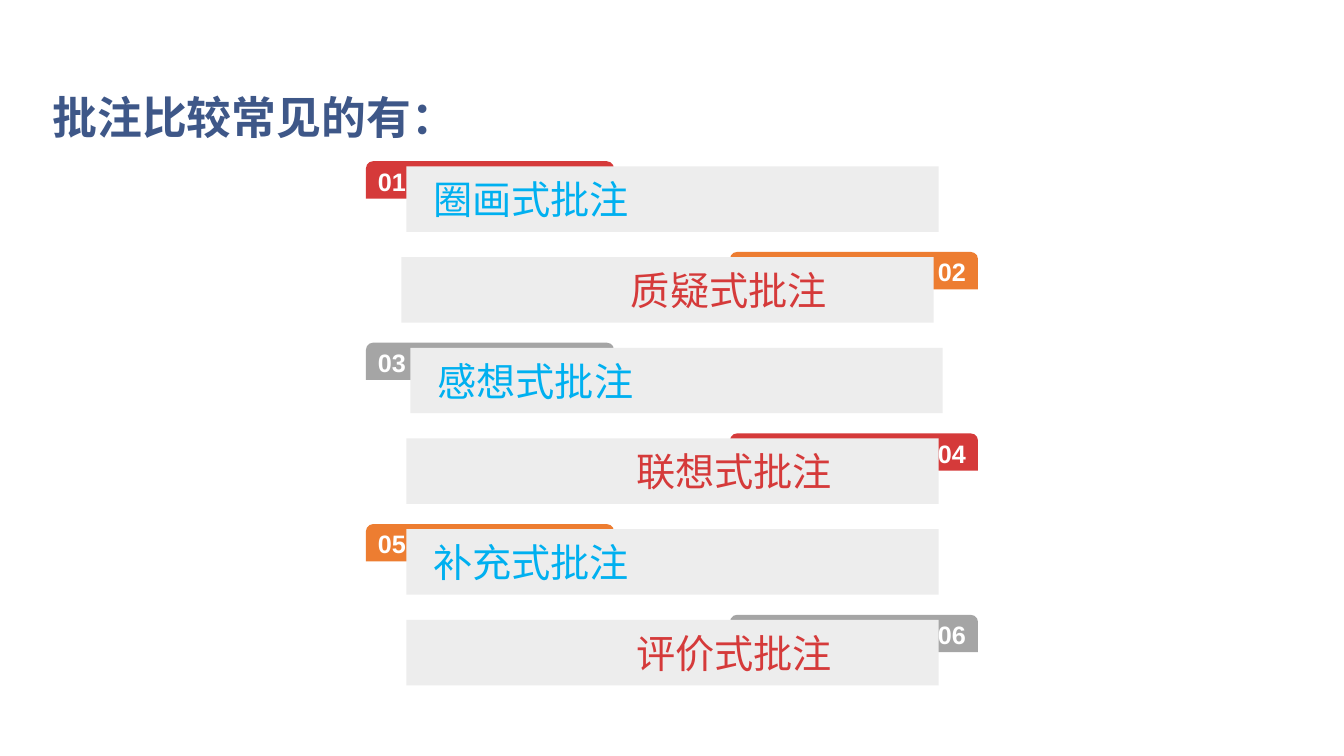
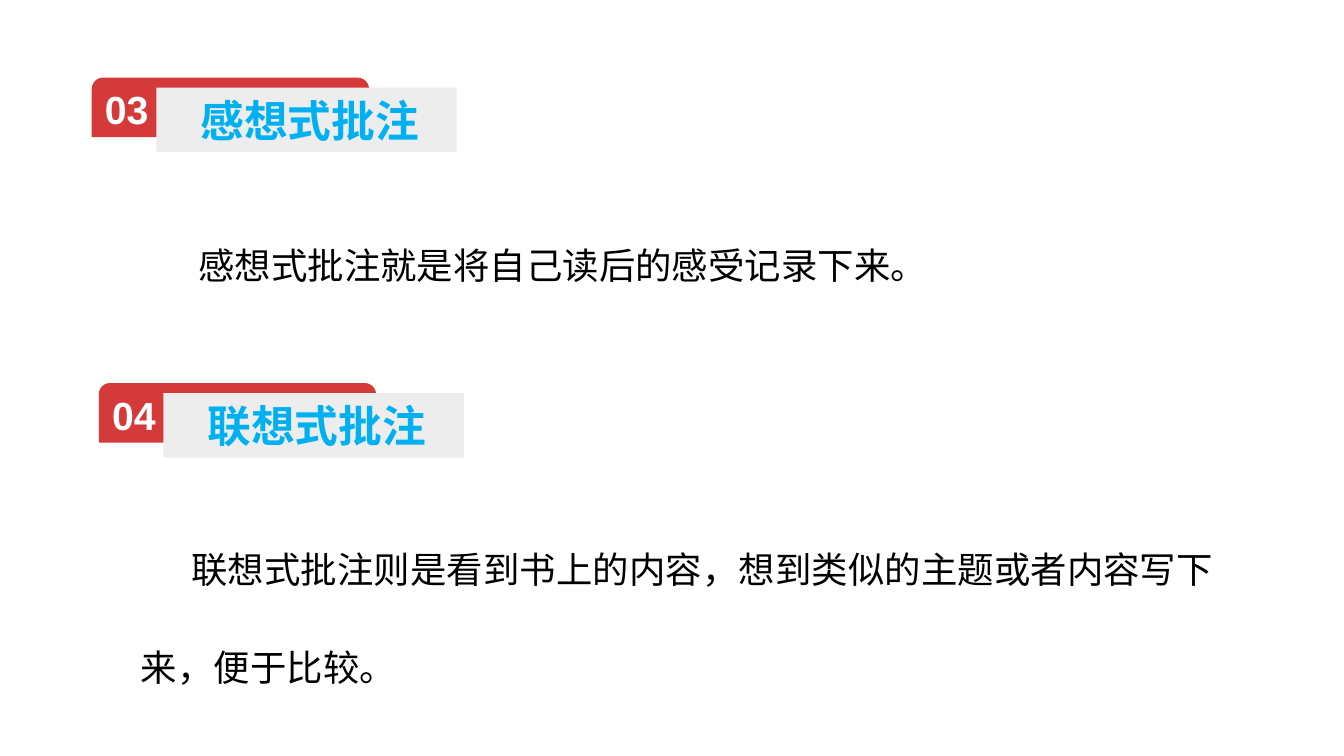
"""Build two slides on common styles of reading annotations."""
from lxml import etree
from pptx import Presentation
from pptx.dml.color import RGBColor
from pptx.enum.shapes import MSO_SHAPE
from pptx.enum.text import MSO_ANCHOR, MSO_AUTO_SIZE, PP_ALIGN
from pptx.oxml.ns import qn
from pptx.util import Inches, Pt

COLORS = {
    "red": "D53A3A",
    "orange": "ED7D31",
    "gray": "A5A5A5",
    "bar": "EDEDED",
    "blue": "00B0F0",
    "navy": "3E5788",
    "white": "FFFFFF",
    "black": "000000",
}
LATIN, CHINESE = "Arial", "Noto Sans CJK SC"
STYLES = {
    "title": {"size": Pt(32), "bold": True, "name": CHINESE},
    "number": {"size": Pt(18), "bold": True, "name": LATIN},
    "label": {"size": Pt(28), "bold": False, "name": CHINESE},
    "big number": {"size": Pt(28), "bold": True, "name": LATIN},
    "big label": {"size": Pt(31.2), "bold": True, "name": CHINESE},
    "body": {"size": Pt(26), "bold": False, "name": CHINESE},
}


def write(box, text, style, color, align=PP_ALIGN.LEFT, indent=0, anchor=MSO_ANCHOR.MIDDLE):
    """Fill a box with one formatted paragraph and return the paragraph."""
    frame = box.text_frame
    frame.word_wrap = True
    frame.auto_size = MSO_AUTO_SIZE.NONE
    frame.vertical_anchor = anchor
    para = frame.paragraphs[0]
    para.alignment = align
    para._p.get_or_add_pPr().set("indent", str(Inches(indent)))
    span = para.add_run()
    span.text = text
    for name, value in STYLES[style].items():
        setattr(span.font, name, value)
    span.font.color.rgb = RGBColor.from_string(COLORS[color])
    east_asian = etree.SubElement(span._r.get_or_add_rPr(), qn("a:ea"))
    east_asian.set("typeface", CHINESE)
    return para


def add_block(page, kind, area, color):
    """Add a plain filled shape without outline or shadow."""
    block = page.shapes.add_shape(kind, *map(Inches, area))
    block.shadow.inherit = False
    block.fill.solid()
    block.fill.fore_color.rgb = RGBColor.from_string(COLORS[color])
    block.line.fill.background()
    if kind == MSO_SHAPE.ROUND_2_SAME_RECTANGLE:
        block.adjustments[0] = 0.19
    return block


deck = Presentation()
deck.slide_width, deck.slide_height = Inches(13.33), Inches(7.5)
title_only, blank = deck.slide_layouts[5], deck.slide_layouts[6]

page = deck.slides.add_slide(title_only)
title = page.shapes.title
title.left, title.top, title.width, title.height = map(Inches, (0.42, 0.6, 5.01, 1.11))
write(title, "批注比较常见的有：", "title", "navy")

TAB_COLORS = ["red", "orange", "gray"]
ROWS = [
    ("圈画式批注", 4.03),
    ("质疑式批注", 3.98),
    ("感想式批注", 4.07),
    ("联想式批注", 4.03),
    ("补充式批注", 4.03),
    ("评价式批注", 4.03),
]
for index, (label, bar_left) in enumerate(ROWS):
    top = 1.6 + 0.9 * index
    on_right = index % 2 == 1
    tab_left, align, color, indent = (
        (7.24, PP_ALIGN.RIGHT, "red", 2.18) if on_right
        else (3.63, PP_ALIGN.LEFT, "blue", 0.17)
    )
    tab = add_block(page, MSO_SHAPE.ROUND_2_SAME_RECTANGLE,
                    (tab_left, top, 2.46, 0.37), TAB_COLORS[index % 3])
    write(tab, f"{index + 1:02}", "number", "white", align)
    bar = add_block(page, MSO_SHAPE.RECTANGLE, (bar_left, top + 0.05, 5.28, 0.65), "bar")
    write(bar, label, "label", color, indent=indent)

page = deck.slides.add_slide(blank)
SECTIONS = [
    ("03", "感想式批注", 0.91, 0.77, "感想式批注就是将自己读后的感受记录下来。", 1.82, 0.94, 0.57),
    ("04", "联想式批注", 0.98, 3.8,
     "联想式批注则是看到书上的内容，想到类似的主题或者内容写下来，便于比较。", 4.84, 1.94, 0.5),
]
for number, label, left, top, text, text_top, text_height, indent in SECTIONS:
    tab = add_block(page, MSO_SHAPE.ROUND_2_SAME_RECTANGLE, (left, top, 2.75, 0.59), "red")
    write(tab, number, "big number", "white")
    bar = add_block(page, MSO_SHAPE.RECTANGLE, (left + 0.64, top + 0.1, 2.98, 0.64), "bar")
    write(bar, label, "big label", "blue", indent=0.34)
    body = page.shapes.add_textbox(*map(Inches, (1.3, text_top, 10.84, text_height)))
    para = write(body, text, "body", "black", PP_ALIGN.JUSTIFY, indent, MSO_ANCHOR.TOP)
    para.line_spacing = Pt(70)

deck.save("out.pptx")
